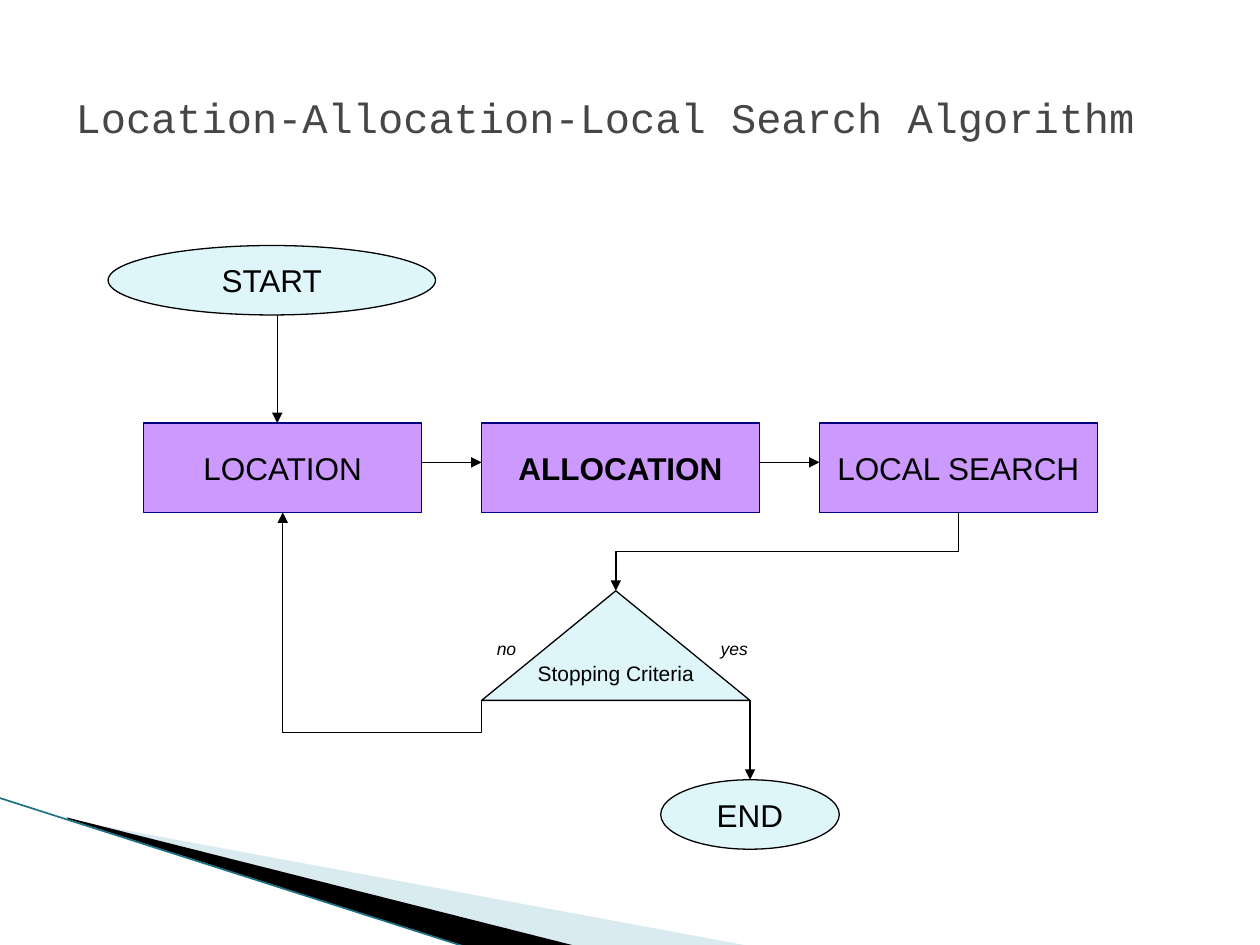
import dataclasses

import lxml.etree
import pptx
import pptx.dml.color
import pptx.enum.shapes
import pptx.enum.text
import pptx.oxml.ns
import pptx.util

Cm = pptx.util.Cm
Pt = pptx.util.Pt
SHAPES = pptx.enum.shapes.MSO_SHAPE
CONNECTORS = pptx.enum.shapes.MSO_CONNECTOR
ALIGN = pptx.enum.text.PP_ALIGN
MIDDLE = pptx.enum.text.MSO_ANCHOR.MIDDLE
qn = pptx.oxml.ns.qn


@dataclasses.dataclass(frozen=True)
class Theme:
    title_font: str = "Courier New"
    body_font: str = "Arial"
    title_color: str = "464646"
    ink: str = "000000"
    step_fill: str = "CC99FF"
    step_line: str = "000080"
    node_fill: str = "DEF5FA"
    pale_wedge: str = "A0CBDC"
    edge: str = "1B7287"
    title_size: float = 24
    step_size: float = 18
    criteria_size: float = 12
    answer_size: float = 10
    line_width: float = 0.75
    edge_width: float = 0.95


@dataclasses.dataclass(frozen=True)
class Box:
    left: float
    top: float
    width: float
    height: float

    def point(self, x, y):
        return Cm(self.left + x), Cm(self.top + y)


THEME = Theme()


def rgb(color):
    return pptx.dml.color.RGBColor.from_string(color)


def write_text(frame, text, size=THEME.step_size, font=THEME.body_font, color=THEME.ink,
               bold=False, italic=False, align=ALIGN.CENTER, wrap=False, anchor=None):
    frame.word_wrap = wrap
    if anchor is not None:
        frame.vertical_anchor = anchor
    paragraph = frame.paragraphs[0]
    paragraph.alignment = align
    run = paragraph.add_run()
    run.text = text
    run.font.name = font
    run.font.size = Pt(size)
    run.font.bold = bold
    run.font.italic = italic
    run.font.color.rgb = rgb(color)


def add_node(slide, box, geometry, x, y, width, height, text,
             fill=THEME.node_fill, line=THEME.ink, **text_format):
    node = slide.shapes.add_shape(geometry, *box.point(x, y), Cm(width), Cm(height))
    node.shadow.inherit = False
    node.fill.solid()
    node.fill.fore_color.rgb = rgb(fill)
    node.line.color.rgb = rgb(line)
    node.line.width = Pt(THEME.line_width)
    write_text(node.text_frame, text, anchor=MIDDLE, **text_format)


def add_line(slide, box, start, end, kind=CONNECTORS.STRAIGHT, color=THEME.ink,
             width=THEME.line_width, arrow=True):
    connector = slide.shapes.add_connector(kind, *box.point(*start), *box.point(*end))
    connector.line.color.rgb = rgb(color)
    connector.line.width = Pt(width)
    properties = connector.element.spPr
    if arrow:
        outline = properties.find(qn("a:ln"))
        lxml.etree.SubElement(outline, qn("a:tailEnd"), type="triangle")
    lxml.etree.SubElement(properties, qn("a:effectLst"))
    return connector


def add_vertical_elbow(slide, box, start, end, bend):
    (x1, y1), (x2, y2) = start, end
    run, rise = abs(x2 - x1), abs(y2 - y1)
    left = (x1 + x2 - rise) / 2
    top = (y1 + y2 - run) / 2
    elbow = add_line(slide, box, (left, top), (left + rise, top + run), CONNECTORS.ELBOW)
    properties = elbow.element.spPr
    transform = properties.find(qn("a:xfrm"))
    upward = y2 < y1
    transform.set("rot", str((270 if upward else 90) * 60000))
    if upward:
        transform.set("flipV", "1")
    guides = properties.find(qn("a:prstGeom")).find(qn("a:avLst"))
    lxml.etree.SubElement(guides, qn("a:gd"), name="adj1", fmla=f"val {round(bend * 100000)}")


def add_wedge(slide, box, points, color, opacity=100):
    first, *others = [box.point(*point) for point in points]
    builder = slide.shapes.build_freeform(*first)
    builder.add_line_segments(others, close=True)
    wedge = builder.convert_to_shape()
    wedge.shadow.inherit = False
    wedge.fill.solid()
    wedge.fill.fore_color.rgb = rgb(color)
    wedge.line.fill.background()
    if opacity < 100:
        fill_color = wedge.element.spPr.find(qn("a:solidFill"))[0]
        lxml.etree.SubElement(fill_color, qn("a:alpha"), val=str(opacity * 1000))


def draw_corner(slide, box):
    add_wedge(slide, box, [(1.4, 0.45), (15.11, 2.99), (11.58, 2.99), (1.4, 0.43)],
              THEME.pale_wedge, opacity=40)
    add_wedge(slide, box, [(1.35, 0.4), (11.61, 2.99), (9.45, 3.02), (1.37, 0.43)], THEME.ink)
    add_line(slide, box, (-0.03, 0), (9.42, 3.02), color=THEME.edge,
             width=THEME.edge_width, arrow=False)


def draw_title(slide, box):
    title = slide.shapes.title
    title.left, title.top = box.point(0, 0)
    title.width, title.height = Cm(box.width), Cm(box.height)
    write_text(title.text_frame, "Location-Allocation-Local Search Algorithm",
               size=THEME.title_size, font=THEME.title_font, color=THEME.title_color,
               align=ALIGN.LEFT, wrap=True, anchor=MIDDLE)


def draw_flowchart(slide, box):
    step_left, step_top, step_width, step_height, pitch = 0.72, 3.58, 5.6, 1.8, 6.81
    step_bottom = step_top + step_height
    arrow_y = 4.37
    steps = ["LOCATION", "ALLOCATION", "LOCAL SEARCH"]
    lefts = [step_left + index * pitch for index in range(len(steps))]
    centers = [left + step_width / 2 for left in lefts]
    for left, step in zip(lefts, steps):
        add_node(slide, box, SHAPES.RECTANGLE, left, step_top, step_width, step_height, step,
                 fill=THEME.step_fill, line=THEME.step_line, bold=step == "ALLOCATION")
    for left, following in zip(lefts, lefts[1:]):
        add_line(slide, box, (left + step_width, arrow_y), (following, arrow_y))

    oval_height = 1.4
    start_arrow_x = 3.41
    add_node(slide, box, SHAPES.OVAL, 0, 0, 6.6, oval_height, "START")
    add_line(slide, box, (start_arrow_x, oval_height), (start_arrow_x, step_top))

    criteria_left, criteria_top, criteria_width, criteria_height = lefts[1], 6.96, 5.41, 2.21
    criteria_right = criteria_left + criteria_width
    criteria_bottom = criteria_top + criteria_height
    add_node(slide, box, SHAPES.ISOSCELES_TRIANGLE, criteria_left, criteria_top,
             criteria_width, criteria_height, "Stopping Criteria", size=THEME.criteria_size)
    add_vertical_elbow(slide, box, (centers[2], step_bottom),
                       (criteria_left + criteria_width / 2, criteria_top), 0.5)
    add_vertical_elbow(slide, box, (criteria_left, criteria_bottom),
                       (centers[0], step_bottom), -0.17)

    end_width, end_top = 3.6, 10.77
    add_node(slide, box, SHAPES.OVAL, criteria_right - end_width / 2, end_top,
             end_width, oval_height, "END")
    add_line(slide, box, (criteria_right, criteria_bottom), (criteria_right, end_top))

    for answer, left, width in [("yes", 11.92, 1.4), ("no", criteria_left, 1)]:
        label = slide.shapes.add_textbox(*box.point(left, 7.78), Cm(width), Cm(0.69))
        write_text(label.text_frame, answer, size=THEME.answer_size, italic=True, wrap=True)


def main():
    deck = pptx.Presentation()
    deck.slide_width, deck.slide_height = Cm(25.4), Cm(19.05)
    slide = deck.slides.add_slide(deck.slide_layouts[5])
    draw_corner(slide, Box(0, 16.08, 15.11, 2.97))
    draw_title(slide, Box(1.27, 0.76, 22.86, 3.18))
    draw_flowchart(slide, Box(2.18, 4.95, 19.94, 12.17))
    deck.save("out.pptx")


if __name__ == "__main__":
    main()
